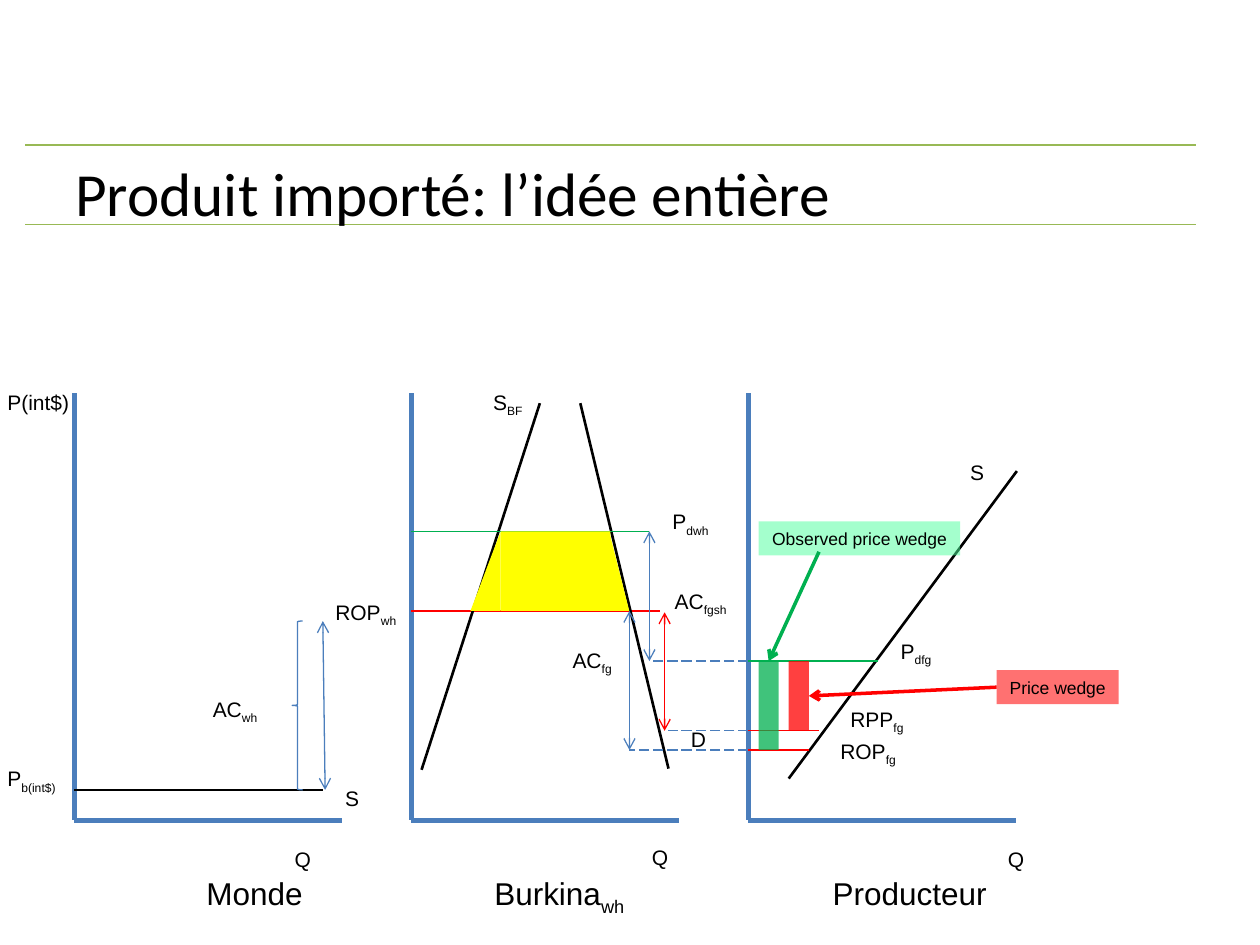
from dataclasses import dataclass

import pptx
import pptx.util
import pptx.dml.color
import pptx.enum.dml
import pptx.enum.shapes
import pptx.enum.text
from pptx.oxml.ns import qn
from lxml import etree

Pt = pptx.util.Pt
KIND = pptx.enum.shapes.MSO_SHAPE
ALIGN = pptx.enum.text.PP_ALIGN
DASH = pptx.enum.dml.MSO_LINE.LONG_DASH


@dataclass(frozen=True)
class Theme:
    blue: str = "4B7EBC"
    olive: str = "98B955"
    green: str = "00B050"
    mint: str = "4BFF9C"
    red: str = "FF0000"
    rose: str = "FF7171"
    yellow: str = "FFFF00"
    black: str = "000000"
    head: str = "Calibri"
    body: str = "Arial"
    title: float = 35
    name: float = 18
    label: float = 12
    note: float = 10
    thin: float = 0.75
    curve: float = 1.5
    bold: float = 2
    axis: float = 3


T = Theme()


@dataclass(frozen=True)
class Level:
    """Heights of the price lines, measured down from the top of a panel."""
    pdwh: float = 79
    ropwh: float = 124.5
    landed: float = 130.3
    pdfg: float = 153.2
    rppfg: float = 193
    ropfg: float = 204
    border: float = 226.8


L = Level()


def rgb(code):
    return pptx.dml.color.RGBColor.from_string(code)


class Panel:
    """Draws parts at places relative to the corner of its box."""

    def __init__(self, slide, box):
        self.shapes = slide.shapes
        self.x, self.y, self.w, self.h = box

    def line(self, x1, y1, x2, y2, color, width=T.thin, dash=None, ends=()):
        link = self.shapes.add_connector(
            pptx.enum.shapes.MSO_CONNECTOR.STRAIGHT,
            Pt(self.x + x1), Pt(self.y + y1), Pt(self.x + x2), Pt(self.y + y2))
        link.line.color.rgb = rgb(color)
        link.line.width = Pt(width)
        if dash:
            link.line.dash_style = dash
        for end in ends:
            tip = etree.SubElement(link.line._get_or_add_ln(), qn(f"a:{end}End"))
            tip.set("type", "arrow")
        etree.SubElement(link._element.spPr, qn("a:effectLst"))
        return link

    def span(self, x1, y1, x2, y2, color):
        return self.line(x1, y1, x2, y2, color, ends=("head", "tail"))

    def shape(self, kind, x, y, w, h, fill=None, alpha=100, line=None):
        part = self.shapes.add_shape(
            kind, Pt(self.x + x), Pt(self.y + y), Pt(w), Pt(h))
        part.shadow.inherit = False
        if fill:
            part.fill.solid()
            part.fill.fore_color.rgb = rgb(fill)
            if alpha < 100:
                tint = part._element.spPr.find(".//" + qn("a:srgbClr"))
                etree.SubElement(tint, qn("a:alpha")).set("val", str(alpha * 1000))
        else:
            part.fill.background()
        if line:
            part.line.color.rgb = rgb(line)
            part.line.width = Pt(T.thin)
        else:
            part.line.fill.background()
        return part

    def label(self, text, x, y, w, h=21.6, size=T.label, font=T.body):
        """Adds text whose part after an underscore is a subscript."""
        box = self.shapes.add_textbox(
            Pt(self.x + x), Pt(self.y + y), Pt(w), Pt(h))
        write(box, text, size, font)
        return box

    def name(self, text, x, w):
        self.label(text, x, self.h + 27.3, w, 28.8, T.name)

    def axes(self):
        self.line(0, 0, 0, self.h, T.blue, T.axis)
        self.line(0, self.h, self.w, self.h, T.blue, T.axis)

    def callout(self, text, x, y, w, fill, alpha=100):
        box = self.shape(KIND.RECTANGLE, x, y, w, 19.4, fill, alpha)
        write(box, text, T.note, T.body)
        box.text_frame.paragraphs[0].alignment = ALIGN.CENTER
        return box


def write(shape, text, size, font):
    base, _, sub = text.partition("_")
    frame = shape.text_frame
    frame.word_wrap = False
    para = frame.paragraphs[0]
    para.text = base
    if sub:
        low = para.add_run()
        low.text = sub
        low._r.get_or_add_rPr().set("baseline", "-25000")
    for run in para.runs:
        run.font.size = Pt(size)
        run.font.name = font
        run.font.color.rgb = rgb(T.black)


def header(slide, box):
    band = Panel(slide, box)
    for y in (0, band.h):
        band.line(0, y, band.w, y, T.olive)
    title = band.label("Produit importé: l’idée entière", 21.6, 2.4, 648, 43.9,
                       T.title, T.head)
    title.text_frame.word_wrap = True


def world(slide, box):
    p = Panel(slide, box)
    p.axes()
    p.line(0, L.border, 142, L.border, T.black, T.curve)
    p.shape(KIND.LEFT_BRACE, 124.5, L.landed, 6, L.border - L.landed, line=T.blue)
    p.span(143.3, L.border, 142, L.landed, T.blue)
    p.label("P(int$)", -45.4, -5.8, 50.4)
    p.label("P_b(int$)", -45.4, 209.5, 45.4)
    p.label("AC_wh", 72, 170, 41.8)
    p.label("ROP_wh", 142, 114.5, 51)
    p.label("S", 147.6, 221, 22.3)
    p.label("Q", 118.8, 255.6, 23.8)
    p.name("Monde", 68.4, 69.8)


def market(slide, box, reach):
    """Wholesale panel; its dashed lines run on to the next axis at reach."""
    p = Panel(slide, box)
    p.axes()
    p.line(0, L.ropwh, 142, L.ropwh, T.red)
    p.line(96.5, 5.8, 146.9, 214.6, T.black, T.curve)
    p.line(5.8, 215.3, 73.4, 5.8, T.black, T.curve)
    p.line(0, L.pdwh, 136, L.pdwh, T.green)
    for x, y in ((124.6, L.ropfg), (146.9, L.rppfg), (136, L.pdfg)):
        p.line(reach, y, x, y, T.blue, dash=DASH)
    p.span(136, L.pdfg, 136, L.pdwh, T.blue)
    p.span(124.6, L.ropfg, 124.6, L.ropwh, T.blue)
    gap = L.ropwh - L.pdwh
    p.shape(KIND.RECTANGLE, 51.1, L.pdwh, 62.6, gap, T.yellow)
    p.shape(KIND.RIGHT_TRIANGLE, 113, L.pdwh, 11.5, gap, T.yellow)
    left = p.shape(KIND.RIGHT_TRIANGLE, 33.8, L.pdwh, 17.3, gap, T.yellow)
    left._element.spPr.find(qn("a:xfrm")).set("flipH", "1")
    p.span(144.7, L.rppfg, 144.7, L.ropwh + 0.8, T.red)
    p.label("S_BF", 39.6, -5.8, 33.1)
    p.label("P_dwh", 142, 62.6, 37.4)
    p.label("AC_fgsh", 143.3, 108, 46.8)
    p.label("AC_fg", 85, 142, 38.2)
    p.label("D", 152.6, 187.2, 23)
    p.label("Q", 130.3, 254.2, 23.8)
    p.name("Burkina_wh", 40.3, 91.4)


def farm(slide, box):
    p = Panel(slide, box)
    p.axes()
    p.line(23, 220.3, 153.4, 44.6, T.black, T.curve)
    p.line(0, L.ropfg, 34.6, L.ropfg, T.red)
    p.line(0, L.pdfg, 74.2, L.pdfg, T.green)
    p.line(0, L.rppfg, 40.3, L.rppfg, T.red)
    p.label("S", 119.5, 34.6, 22.3)
    p.label("P_dfg", 79.9, 136.8, 33.8)
    p.label("RPP_fg", 51.1, 175.7, 46.1)
    p.label("ROP_fg", 45.4, 193.7, 47.5)
    p.label("Q", 141.1, 255.6, 23.8)
    p.name("Producteur", 41, 103.7)
    seen, true = [
        p.shape(KIND.RECTANGLE, x, L.pdfg, 11.5, low - L.pdfg, fill, 75)
        for x, low, fill in ((5.8, L.ropfg, T.green), (23, L.rppfg, T.red))]
    p.callout("Observed price wedge", 5.8, 73.4, 115.2, T.mint, 50)
    note = p.callout("Price wedge", 141.8, 158.4, 69.8, T.rose)
    link = p.line(141.8, 168, 34.5, 173, T.red, T.bold, ends=("tail",))
    link.begin_connect(note, 1)
    link.end_connect(true, 3)
    link = p.line(40.3, 90.7, 11.5, L.pdfg, T.green, T.bold, ends=("tail",))
    link.end_connect(seen, 0)


def main():
    deck = pptx.Presentation()
    deck.slide_width, deck.slide_height = Pt(720), Pt(540)
    slide = deck.slides.add_slide(deck.slide_layouts[6])
    header(slide, (14.4, 82.8, 668.9, 45.4))
    left, step, top, wide, high = 42.5, 192.6, 224.6, 153, 244.1
    boxes = [(left + i * step, top, wide, high) for i in range(3)]
    world(slide, boxes[0])
    market(slide, boxes[1], step)
    farm(slide, boxes[2])
    deck.save("out.pptx")


if __name__ == "__main__":
    main()
